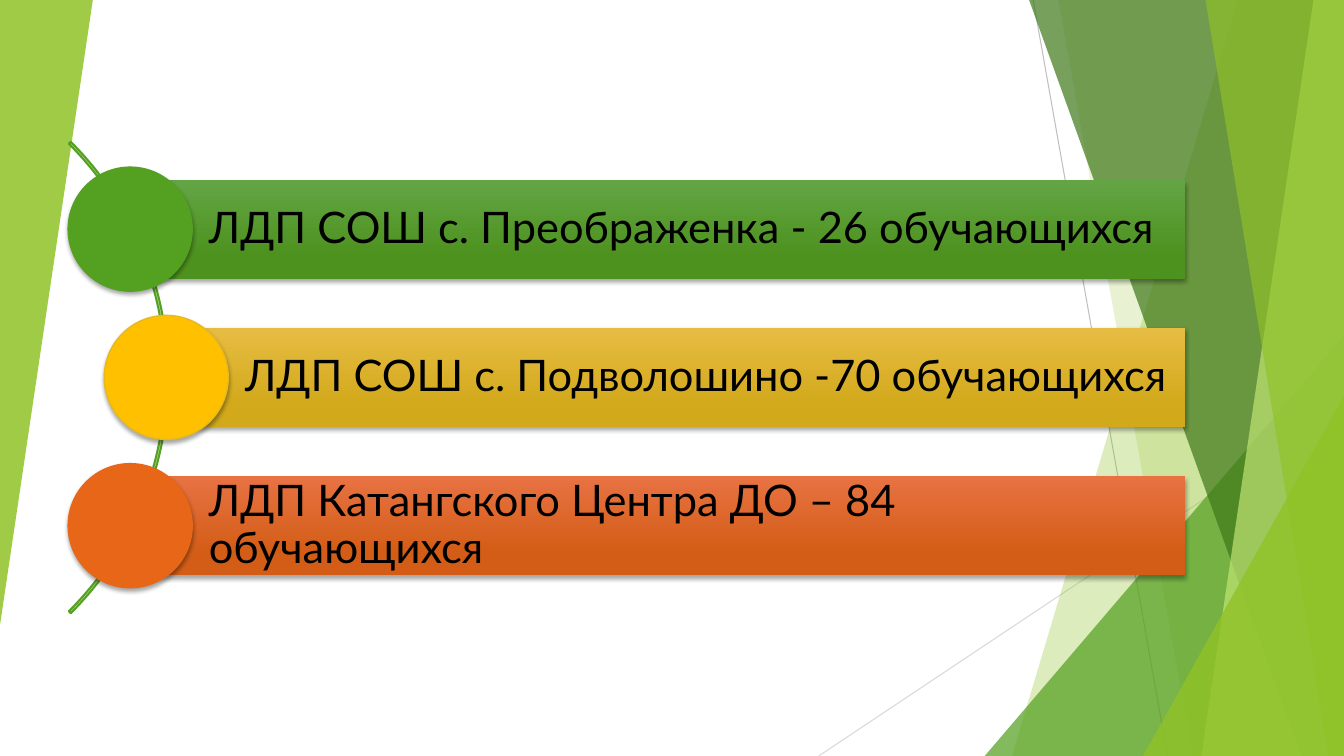
from lxml import etree
from pptx import Presentation
from pptx.dml.color import RGBColor
from pptx.enum import shapes, text
from pptx.oxml import ns
from pptx.util import Pt

COLORS = {
    "lime": "90C226", "pale": "C0E474", "green": "54A021", "forest": "3F7819",
    "gray": "BFBFBF", "light_gray": "D9D9D9", "black": "000000",
    "gold": "FFC000", "gold_edge": "E6B91E", "orange": "E76618",
    "green_top": "63A545", "green_base": "4D921E",
    "gold_top": "E7BC43", "gold_base": "D2A91B",
    "orange_top": "E87242", "orange_base": "D35D16",
}
RGB = {name: RGBColor.from_string(value) for name, value in COLORS.items()}
WIDTH, HEIGHT = 960, 540


def paint_facet(facet, color, opacity):
    facet.shadow.inherit = False
    facet.line.fill.background()
    facet.fill.solid()
    facet.fill.fore_color.rgb = RGB[color]
    tint = facet.element.spPr.find(".//" + ns.qn("a:srgbClr"))
    etree.SubElement(tint, ns.qn("a:alpha"), val=str(opacity * 1000))


def drop_shadow(item):
    item.shadow.inherit = False
    effects = item.element.spPr.find(ns.qn("a:effectLst"))
    shadow = etree.SubElement(effects, ns.qn("a:outerShdw"), blurRad=str(Pt(3)),
                              dist=str(Pt(2)), dir="5400000", rotWithShape="0")
    tint = etree.SubElement(shadow, ns.qn("a:srgbClr"), val=COLORS["black"])
    etree.SubElement(tint, ns.qn("a:alpha"), val="35000")


prs = Presentation()
prs.slide_width, prs.slide_height = Pt(WIDTH), Pt(HEIGHT)
slide = prs.slides.add_slide(prs.slide_layouts[6])
canvas = slide.shapes

# Thin background lines
for x1, y1, x2, y2, color in [(738, 0, 834, HEIGHT, "gray"),
                              (WIDTH, 290, 584.8, HEIGHT, "light_gray")]:
    ray = canvas.add_connector(shapes.MSO_CONNECTOR.STRAIGHT,
                               Pt(x1), Pt(y1), Pt(x2), Pt(y2))
    ray.line.color.rgb = RGB[color]
    ray.line.width = Pt(0.75)
    etree.SubElement(ray.element.spPr, ns.qn("a:effectLst"))

# Facets on the right: bands give top x and bottom x, triangles left and top
facets = [
    ("band", 884.2, 722.9, "lime", 30),
    ("band", 756, 851.8, "lime", 20),
    ("triangle", 703.4, 239.8, "green", 72),
    ("band", 735.1, 929.5, "forest", 70),
    ("band", 938.2, 858.2, "pale", 70),
    ("band", 861.1, 949, "lime", 65),
    ("triangle", 816.5, 283, "lime", 80),
]
for kind, a, b, color, opacity in facets:
    if kind == "band":
        outline = canvas.build_freeform(Pt(a), 0)
        outline.add_line_segments([(Pt(WIDTH), 0), (Pt(WIDTH), Pt(HEIGHT)),
                                   (Pt(b), Pt(HEIGHT))])
        facet = outline.convert_to_shape()
    else:
        facet = canvas.add_shape(shapes.MSO_SHAPE.ISOSCELES_TRIANGLE, Pt(a), Pt(b),
                                 Pt(WIDTH - a), Pt(HEIGHT - b))
        facet.adjustments[0] = 1
    paint_facet(facet, color, opacity)

# Facet on the left
left_facet = canvas.add_shape(shapes.MSO_SHAPE.ISOSCELES_TRIANGLE,
                              0, 0, Pt(66.3), Pt(446.4))
left_facet.adjustments[0] = 1
left_facet.rotation = 180
paint_facet(left_facet, "lime", 85)

# Arc behind the dots
arc = canvas.add_shape(shapes.MSO_SHAPE.BLOCK_ARC, Pt(-355.7), Pt(31.7), Pt(476), Pt(476))
for index, value in enumerate([189, 27, 0.004]):
    arc.adjustments[index] = value
arc.shadow.inherit = False
arc.fill.background()
arc.line.color.rgb = RGB["green"]
arc.line.width = Pt(1.5)

# Camps: a bar with its label and a dot centred on the bar's left edge
BAR_TOP, BAR_HEIGHT, BAR_RIGHT, PITCH, DOT = 128.4, 70.6, 846.7, 105.9, 88.6
camps = [
    ("ЛДП СОШ с. Преображенка - 26 обучающихся", 93, "green", "green", "green"),
    ("ЛДП СОШ с. Подволошино -70 обучающихся", 118.8, "gold", "gold", "gold_edge"),
    ("ЛДП Катангского Центра ДО – 84 обучающихся", 93, "orange", "orange", "orange"),
]
for row, (label, left, hue, dot_fill, dot_edge) in enumerate(camps):
    top = BAR_TOP + row * PITCH
    bar = canvas.add_shape(shapes.MSO_SHAPE.RECTANGLE, Pt(left), Pt(top),
                           Pt(BAR_RIGHT - left), Pt(BAR_HEIGHT))
    bar.fill.gradient()
    bar.fill.gradient_angle = 270
    for stop, position, shade in zip(bar.fill.gradient_stops, (0, 0.78), ("top", "base")):
        stop.position = position
        stop.color.rgb = RGB[f"{hue}_{shade}"]
    bar.line.fill.background()
    drop_shadow(bar)

    frame = bar.text_frame
    frame.word_wrap = True
    frame.vertical_anchor = text.MSO_ANCHOR.MIDDLE
    frame.margin_left = Pt(56.2)
    frame.margin_right = frame.margin_top = frame.margin_bottom = Pt(6.2)
    paragraph = frame.paragraphs[0]
    paragraph.text = label
    paragraph.alignment = text.PP_ALIGN.LEFT
    paragraph.line_spacing = 0.9
    paragraph.font.name = "Lato"
    paragraph.font.size = Pt(31)
    paragraph.font.color.rgb = RGB["black"]

    dot = canvas.add_shape(shapes.MSO_SHAPE.OVAL, Pt(left - DOT / 2),
                           Pt(top + (BAR_HEIGHT - DOT) / 2), Pt(DOT), Pt(DOT))
    dot.fill.solid()
    dot.fill.fore_color.rgb = RGB[dot_fill]
    dot.line.color.rgb = RGB[dot_edge]
    dot.line.width = Pt(1)
    drop_shadow(dot)

prs.save("out.pptx")
